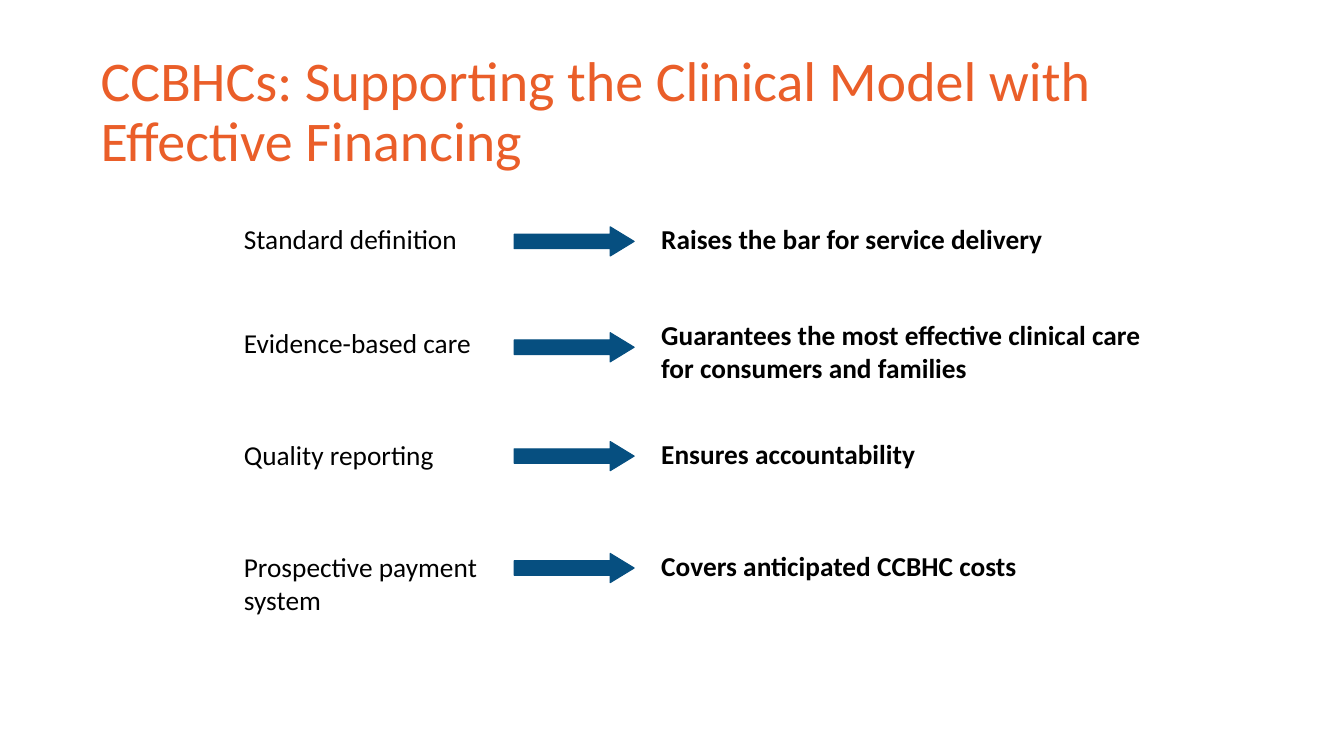
"""Build the slide on how financing supports the CCBHC clinical model."""
from pptx import Presentation
from pptx import util as u
from pptx.dml.color import RGBColor
from pptx.enum import shapes, text

TITLE = "CCBHCs: Supporting the Clinical Model with Effective Financing"
LINKS = [
    {"feature": "Standard definition", "benefit": "Raises the bar for service delivery",
     "top": 2.16, "benefit_lift": 0, "arrow_drop": 0.09},
    {"feature": "Evidence-based care",
     "benefit": "Guarantees the most effective clinical care for consumers and families",
     "top": 3.19, "benefit_lift": 0.08, "arrow_drop": 0.11},
    {"feature": "Quality reporting", "benefit": "Ensures accountability",
     "top": 4.3, "benefit_lift": 0.01, "arrow_drop": 0.08},
    {"feature": "Prospective payment system", "benefit": "Covers anticipated CCBHC costs",
     "top": 5.41, "benefit_lift": 0.01, "arrow_drop": 0.08},
]

ORANGE = RGBColor(0xEA, 0x5E, 0x29)
BLUE = RGBColor(0x06, 0x4F, 0x80)
BLACK = RGBColor(0, 0, 0)
FONT = "Calibri"

WIDTH, HEIGHT = 13.33, 7.5
FEATURE_X, ARROW_X, BENEFIT_X = 2.32, 5.1, 6.46
FEATURE_W, ARROW_W, BENEFIT_W = ARROW_X - FEATURE_X, 1.19, 5.13
FEATURE_H, ARROW_H, BENEFIT_H = 0.57, 0.29, 0.72


def inches(*lengths):
    return [u.Inches(length) for length in lengths]


def add_words(slide, words, area, size=19.5, color=BLACK, bold=False,
              anchor=text.MSO_ANCHOR.TOP, spacing=1.0):
    frame = slide.shapes.add_textbox(*inches(*area)).text_frame
    frame.word_wrap = True
    frame.vertical_anchor = anchor
    paragraph = frame.paragraphs[0]
    paragraph.line_spacing = spacing
    run = paragraph.add_run()
    run.text = words
    run.font.name = FONT
    run.font.size = u.Pt(size)
    run.font.bold = bold
    run.font.color.rgb = color


def add_arrow(slide, top):
    arrow = slide.shapes.add_shape(
        shapes.MSO_SHAPE.RIGHT_ARROW, *inches(ARROW_X, top, ARROW_W, ARROW_H))
    arrow.adjustments[0] = 0.5
    arrow.adjustments[1] = 0.82
    arrow.shadow.inherit = False
    arrow.fill.solid()
    arrow.fill.fore_color.rgb = BLUE
    arrow.line.color.rgb = BLUE
    arrow.line.width = u.Pt(0.75)


def main():
    deck = Presentation()
    deck.slide_width, deck.slide_height = inches(WIDTH, HEIGHT)
    slide = deck.slides.add_slide(deck.slide_layouts[6])
    add_words(slide, TITLE, (0.9, 0.4, 11.82, 1.45), size=40, color=ORANGE,
              anchor=text.MSO_ANCHOR.MIDDLE, spacing=0.9)
    for link in LINKS:
        top = link["top"]
        add_words(slide, link["feature"], (FEATURE_X, top, FEATURE_W, FEATURE_H))
        add_arrow(slide, top + link["arrow_drop"])
        add_words(slide, link["benefit"],
                  (BENEFIT_X, top - link["benefit_lift"], BENEFIT_W, BENEFIT_H), bold=True)
    deck.save("out.pptx")


if __name__ == "__main__":
    main()
